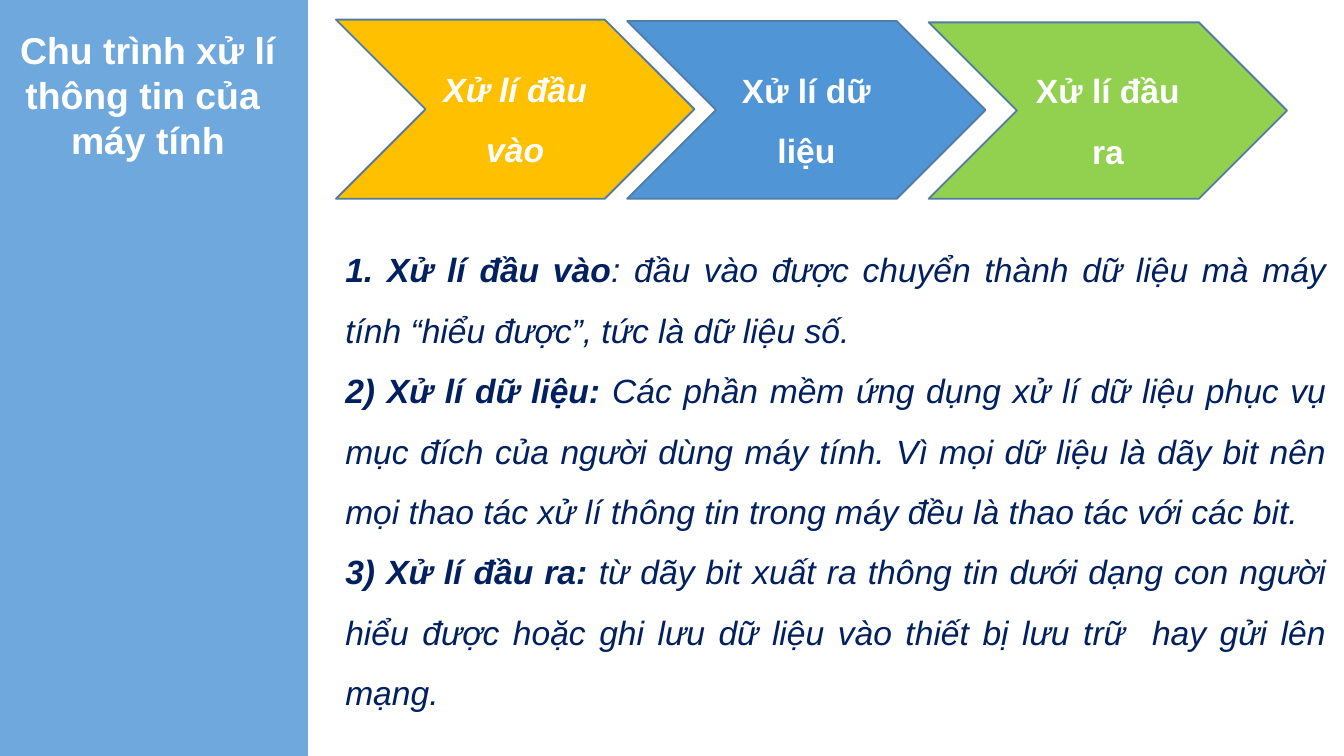
from lxml import etree
from pptx import Presentation
from pptx.dml.color import RGBColor
from pptx.enum.shapes import MSO_SHAPE
from pptx.enum.text import MSO_ANCHOR, MSO_AUTO_SIZE, PP_ALIGN
from pptx.oxml.ns import qn
from pptx.util import Pt

RECTANGLE, CHEVRON = MSO_SHAPE.RECTANGLE, MSO_SHAPE.CHEVRON
TOP, MIDDLE = MSO_ANCHOR.TOP, MSO_ANCHOR.MIDDLE
CENTER, JUSTIFY = PP_ALIGN.CENTER, PP_ALIGN.JUSTIFY
NO_AUTOFIT = MSO_AUTO_SIZE.NONE
WHITE, NAVY = "FFFFFF", "002060"


def color(hex_string):
    return RGBColor.from_string(hex_string)


def add_run(paragraph, text, size, hex_string, bold=True, italic=False):
    run = paragraph.add_run()
    run.text = text
    font = run.font
    font.name, font.size, font.bold, font.italic = "Arial", Pt(size), bold, italic
    font.color.rgb = color(hex_string)


presentation = Presentation()
presentation.slide_width, presentation.slide_height = Pt(720), Pt(405)
slide = presentation.slides.add_slide(presentation.slide_layouts[1])

# Blue background with a white panel behind the placeholders
slide.background.fill.solid()
slide.background.fill.fore_color.rgb = color("6FA8DC")
panel = slide.shapes.add_shape(RECTANGLE, Pt(165), 0, Pt(555), Pt(405))
panel.shadow.inherit = False
panel.fill.solid()
panel.fill.fore_color.rgb = color(WHITE)
panel.line.fill.background()
slide.shapes.element.insert(2, panel.element)

# Sidebar title
title = slide.shapes.title
title.left, title.top, title.width, title.height = Pt(3), Pt(11), Pt(152.5), Pt(80)
title_frame = title.text_frame
title_frame.auto_size = NO_AUTOFIT
title_frame.word_wrap = False
title_frame.vertical_anchor = TOP
for index, line in enumerate(["Chu trình xử lí", "thông tin của ", "máy tính"]):
    paragraph = title_frame.add_paragraph() if index else title_frame.paragraphs[0]
    paragraph.alignment = CENTER
    add_run(paragraph, line, 20, WHITE)

# Process chevrons, sharing one bottom edge
chevron_bottom = 106.5
chevrons = [
    ("Xử lí đầu vào", 180, 10.5, "FFC000", True),
    ("Xử lí dữ liệu", 336, 11.3, "5095D5", False),
    ("Xử lí đầu ra", 497.5, 12, "92D050", False),
]
for label, left, top, fill, italic in chevrons:
    chevron = slide.shapes.add_shape(
        CHEVRON, Pt(left), Pt(top), Pt(192), Pt(chevron_bottom - top))
    chevron.shadow.inherit = False
    chevron.fill.solid()
    chevron.fill.fore_color.rgb = color(fill)
    chevron.line.color.rgb = color("527CA3")
    chevron.line.width = Pt(1)
    chevron.text_frame.word_wrap = True
    chevron.text_frame.vertical_anchor = MIDDLE
    paragraph = chevron.text_frame.paragraphs[0]
    paragraph.alignment = CENTER
    paragraph.line_spacing = 1.5
    add_run(paragraph, label, 18, WHITE, italic=italic)

# Explanation of each step
body = slide.placeholders[1]
body.left, body.top, body.width, body.height = Pt(177.8), Pt(119), Pt(540), Pt(269)
body_frame = body.text_frame
body_frame.auto_size = NO_AUTOFIT
body_frame.word_wrap = True
body_frame.vertical_anchor = TOP
steps = [
    ("1. Xử lí đầu vào",
     ": đầu vào được chuyển thành dữ liệu mà máy tính “hiểu được”, tức là dữ liệu số."),
    ("2) Xử lí dữ liệu: ",
     "Các phần mềm ứng dụng xử lí dữ liệu phục vụ mục đích của người dùng máy tính. "
     "Vì mọi dữ liệu là dãy bit nên mọi thao tác xử lí thông tin trong máy "
     "đều là thao tác với các bit."),
    ("3) Xử lí đầu ra: ",
     "từ dãy bit xuất ra thông tin dưới dạng con người hiểu được "
     "hoặc ghi lưu dữ liệu vào thiết bị lưu trữ  hay gửi lên mạng."),
]
for index, (heading, explanation) in enumerate(steps):
    paragraph = body_frame.add_paragraph() if index else body_frame.paragraphs[0]
    paragraph.alignment = JUSTIFY
    paragraph.line_spacing = 1.5
    paragraph.space_before = Pt(0)
    # Remove the template's bullet and hanging indent
    properties = paragraph._p.get_or_add_pPr()
    properties.set("marL", "0")
    properties.set("indent", "0")
    etree.SubElement(properties, qn("a:buNone"))
    add_run(paragraph, heading, 18, NAVY, italic=True)
    add_run(paragraph, explanation, 18, NAVY, bold=False, italic=True)

presentation.save("out.pptx")
